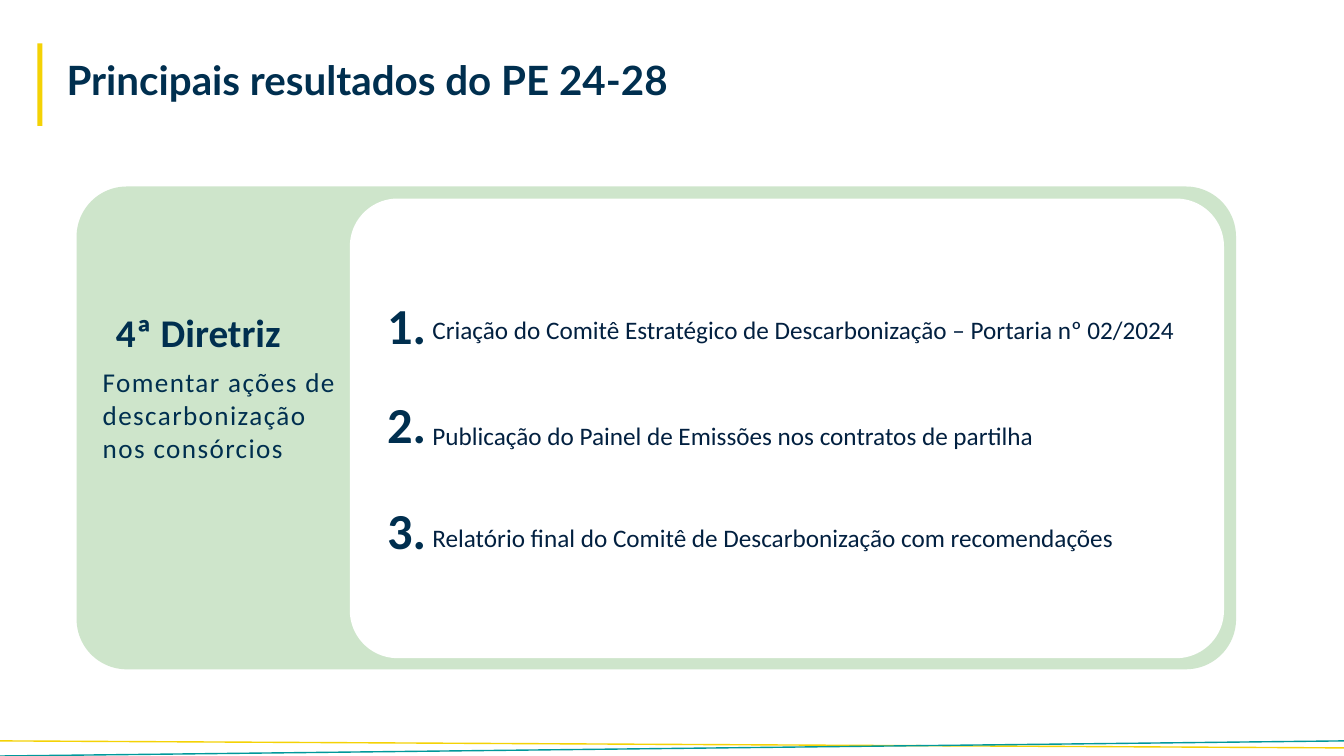
from pptx import Presentation
from pptx.dml.color import RGBColor
from pptx.enum.shapes import MSO_CONNECTOR, MSO_SHAPE
from pptx.enum.text import MSO_ANCHOR, PP_ALIGN
from pptx.oxml.ns import qn
from pptx.util import Inches, Pt
from lxml import etree

RECT, ROUNDED = MSO_SHAPE.RECTANGLE, MSO_SHAPE.ROUNDED_RECTANGLE
STRAIGHT = MSO_CONNECTOR.STRAIGHT
TOP, LEFT = MSO_ANCHOR.TOP, PP_ALIGN.LEFT

# Content
TITLE = "Principais resultados do PE 24-28"
GUIDELINE = "4ª Diretriz"
GOAL = "Fomentar ações de descarbonização nos consórcios"
# result, top of its number, top of its text
RESULTS = [
    ("Criação do Comitê Estratégico de Descarbonização – Portaria nº 02/2024", 2.87, 3.07),
    ("Publicação do Painel de Emissões nos contratos de partilha", 3.85, 4.12),
    ("Relatório final do Comitê de Descarbonização com recomendações", 4.9, 5.13),
]

# Look
COLORS = {"navy": "002F4F", "ink": "022040", "yellow": "F4D205",
          "teal": "00989A", "green": "CEE5CB", "white": "FFFFFF"}
TITLE_FONT = {"name": "Lato", "size": Pt(28.8), "bold": True}
GUIDELINE_FONT = {"name": "Calibri", "size": Pt(28), "bold": True}
GOAL_FONT = {"name": "Calibri", "size": Pt(19.4), "bold": False}
NUMBER_FONT = {"name": "Calibri", "size": Pt(36), "bold": True}
RESULT_FONT = {"name": "Calibri", "size": Pt(18), "bold": False}
CORNER = 0.104
SLIDE_W, SLIDE_H = 13.33, 7.5


def color(name):
    return RGBColor.from_string(COLORS[name])


def add_panel(slide, kind, box, fill):
    panel = slide.shapes.add_shape(kind, *map(Inches, box))
    panel.shadow.inherit = False
    panel.fill.solid()
    panel.fill.fore_color.rgb = color(fill)
    panel.line.fill.background()
    if kind == ROUNDED:
        panel.adjustments[0] = CORNER


def add_wave(slide, start_y, end_y, stroke):
    wave = slide.shapes.add_connector(
        STRAIGHT, Inches(SLIDE_W), Inches(start_y), Inches(0), Inches(end_y))
    wave.line.color.rgb = color(stroke)
    wave.line.width = Pt(1)
    etree.SubElement(wave._element.spPr, qn("a:effectLst"))


def write(frame, text, font, ink="navy", wrap=True):
    frame.word_wrap = wrap
    frame.vertical_anchor = TOP
    paragraph = frame.paragraphs[0]
    paragraph.alignment = LEFT
    run = paragraph.add_run()
    run.text = text
    for key, value in font.items():
        setattr(run.font, key, value)
    run.font.color.rgb = color(ink)
    return run


def add_text(slide, box, *args, **kwargs):
    frame = slide.shapes.add_textbox(*map(Inches, box)).text_frame
    return write(frame, *args, **kwargs)


def main():
    prs = Presentation()
    prs.slide_width, prs.slide_height = Inches(SLIDE_W), Inches(SLIDE_H)
    slide = prs.slides.add_slide(prs.slide_layouts[5])

    # Title with its accent bar
    add_panel(slide, RECT, (0.37, 0.43, 0.05, 0.82), "yellow")
    title = slide.shapes.title
    title.left, title.top, title.width, title.height = map(Inches, (0.56, 0.55, 9.95, 0.7))
    write(title.text_frame, TITLE, TITLE_FONT)
    title.text_frame.paragraphs[0].line_spacing = 0.9

    # Footer lines
    add_wave(slide, 7.42, 7.35, "yellow")
    add_wave(slide, 7.35, SLIDE_H, "teal")

    # Guideline card
    add_panel(slide, ROUNDED, (0.76, 1.85, 11.5, 4.79), "green")
    add_panel(slide, ROUNDED, (3.47, 1.97, 8.67, 4.56), "white")
    add_text(slide, (1.05, 3.01, 1.86, 0.57), GUIDELINE, GUIDELINE_FONT, wrap=False)
    goal = add_text(slide, (0.92, 3.58, 2.59, 1.08), GOAL, GOAL_FONT)
    goal.font._element.set("spc", "100")

    # Numbered results
    for number, (result, number_top, result_top) in enumerate(RESULTS, 1):
        add_text(slide, (4.19, result_top, 7.79, 0.4), result, RESULT_FONT, "ink")
        add_text(slide, (3.74, number_top, 0.59, 0.71), f"{number}.", NUMBER_FONT, wrap=False)

    prs.save("out.pptx")


if __name__ == "__main__":
    main()
